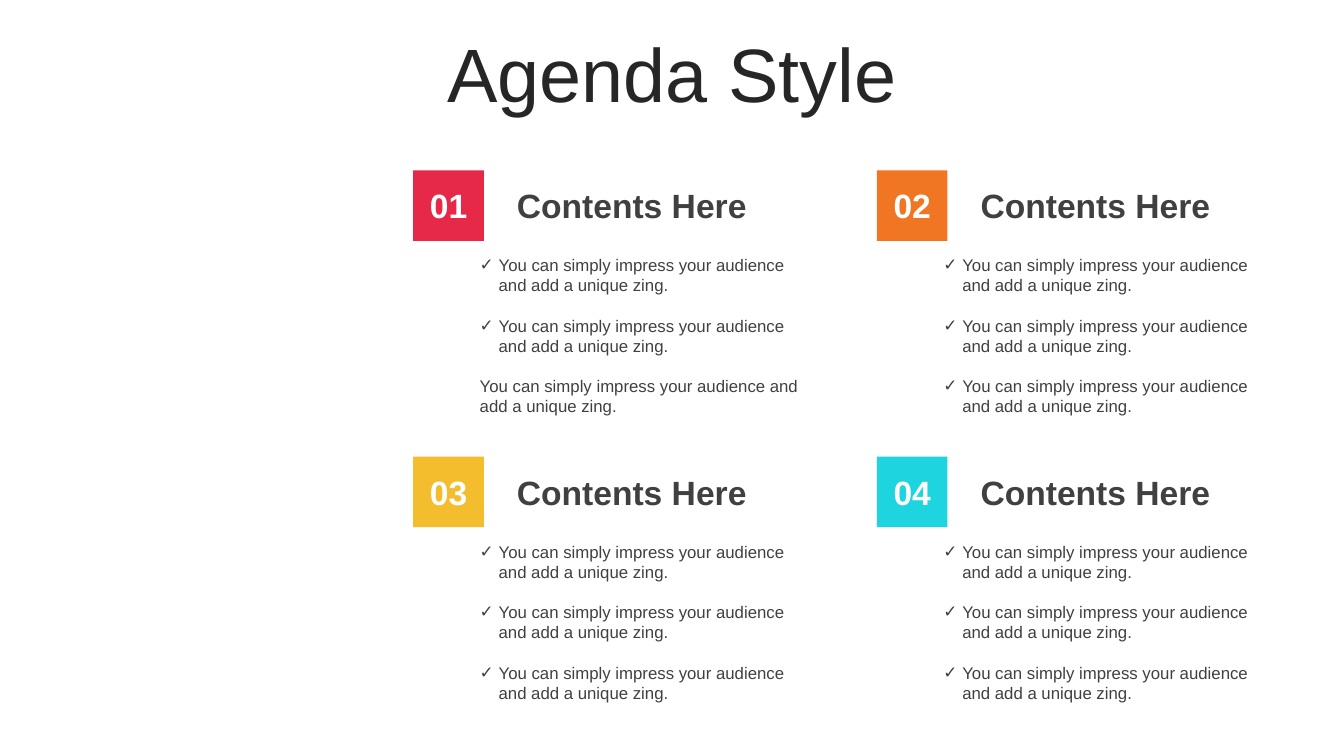
from dataclasses import dataclass

from lxml import etree
from pptx import Presentation
from pptx.dml import color as clr
from pptx.enum import shapes, text
from pptx.oxml import ns
from pptx.util import Pt

HUES = {
    "red": "E62949",
    "orange": "F07624",
    "gold": "F4BD2D",
    "cyan": "1ED4DE",
    "title": "262626",
    "body": "404040",
    "white": "FFFFFF",
}
FONT = "Arial"
POINT = "You can simply impress your audience and add a unique zing."
LEFT, TOP = 295.2, 121.7
COL, ROW = 331.2, 204.5
SIDE = 50.4
INDENT = 13.5


@dataclass
class Topic:
    label: str
    hue: str
    ticks: tuple = (True, True, True)


TOPICS = [
    Topic("01", "red", (True, True, False)),
    Topic("02", "orange"),
    Topic("03", "gold"),
    Topic("04", "cyan"),
]


def rgb(hue: str) -> clr.RGBColor:
    return clr.RGBColor.from_string(HUES[hue])


def add_run(para, words: str, size: float, hue: str, bold: bool = False) -> None:
    run = para.add_run()
    run.text = words
    run.font.name = FONT
    run.font.size = Pt(size)
    run.font.bold = bold
    run.font.color.rgb = rgb(hue)


def add_frame(parent, box: tuple, pads: tuple):
    """Add a wrapping text box; pads are left, top, right and bottom."""
    frame = parent.add_textbox(*map(Pt, box)).text_frame
    frame.word_wrap = True
    frame.auto_size = text.MSO_AUTO_SIZE.SHAPE_TO_FIT_TEXT
    (frame.margin_left, frame.margin_top,
     frame.margin_right, frame.margin_bottom) = map(Pt, pads)
    return frame


def add_tick(para) -> None:
    props = para._p.get_or_add_pPr()
    props.set("marL", str(Pt(INDENT)))
    props.set("indent", str(-Pt(INDENT)))
    etree.SubElement(props, ns.qn("a:buFont"), typeface=FONT)
    etree.SubElement(props, ns.qn("a:buChar"), char="✓")


def add_topic(slide, topic: Topic, x: float, y: float) -> None:
    group = slide.shapes.add_group_shape().shapes
    pads = (8.5, 3.6, 8.5, 3.6)

    # Coloured square
    tile = group.add_shape(shapes.MSO_SHAPE.RECTANGLE, Pt(x), Pt(y), Pt(SIDE), Pt(SIDE))
    tile.shadow.inherit = False
    tile.fill.solid()
    tile.fill.fore_color.rgb = rgb(topic.hue)
    tile.line.fill.background()

    # Heading
    head = add_frame(group, (x + 65.5, y + 7.2, 190, 36), pads)
    add_run(head.paragraphs[0], "Contents Here", 24, "body", True)

    # Points
    frame = add_frame(group, (x + 47.5, y + 56.9, 239.8, 123.8), (0, 3.6, 7.2, 3.6))
    for i, tick in enumerate(topic.ticks):
        para = frame.paragraphs[0] if i == 0 else frame.add_paragraph()
        if i:
            para.space_before = Pt(14.4)
        if tick:
            add_tick(para)
        add_run(para, POINT, 12, "body")

    # Number
    para = add_frame(group, (x + 2.9, y + 7.2, 44.6, 36), pads).paragraphs[0]
    para.alignment = text.PP_ALIGN.CENTER
    add_run(para, topic.label, 24, "white", True)


def main() -> None:
    deck = Presentation()
    deck.slide_width, deck.slide_height = Pt(960), Pt(540)
    slide = deck.slides.add_slide(deck.slide_layouts[6])

    # Title
    frame = add_frame(slide.shapes, (0, 15.1, 960, 72.7), (7.2, 3.6, 7.2, 3.6))
    frame.vertical_anchor = text.MSO_ANCHOR.MIDDLE
    para = frame.paragraphs[0]
    para.alignment = text.PP_ALIGN.CENTER
    add_run(para, "Agenda Style", 54, "title")

    # Two by two grid of topics
    for i, topic in enumerate(TOPICS):
        row, col = divmod(i, 2)
        add_topic(slide, topic, LEFT + col * COL, TOP + row * ROW)

    deck.save("out.pptx")


if __name__ == "__main__":
    main()
